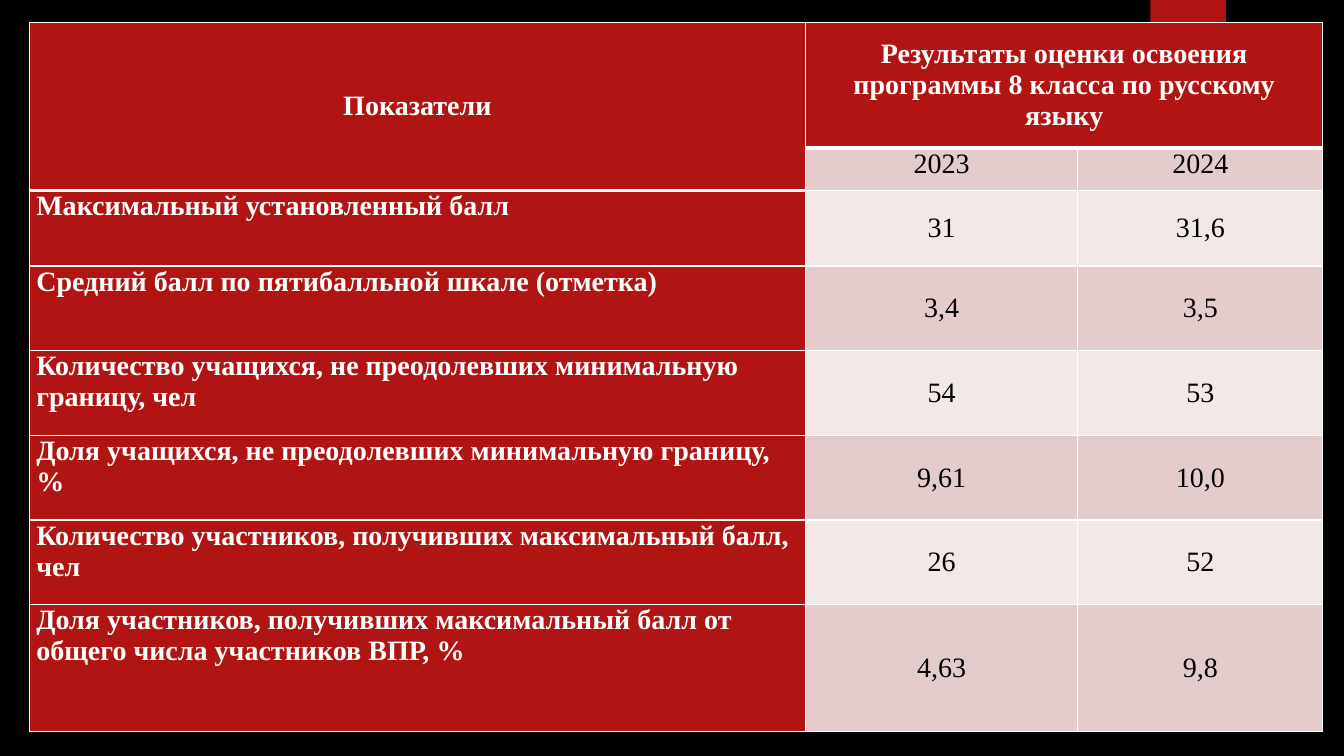
from lxml import etree
from pptx import Presentation
from pptx.dml.color import RGBColor
from pptx.enum.shapes import MSO_SHAPE
from pptx.enum.text import MSO_ANCHOR, PP_ALIGN
from pptx.oxml.ns import qn
from pptx.util import Inches, Pt

RECTANGLE = MSO_SHAPE.RECTANGLE
TOP, MIDDLE = MSO_ANCHOR.TOP, MSO_ANCHOR.MIDDLE
LEFT, CENTER = PP_ALIGN.LEFT, PP_ALIGN.CENTER

RED, BLACK, WHITE = "B01513", "000000", "FFFFFF"
DARK_BAND, LIGHT_BAND = "E4CCCC", "F2E8E7"
FONT = "Times New Roman"

ROWS = [
    ("Показатели", "Результаты оценки освоения программы 8 класса по русскому языку", ""),
    ("", "2023", "2024"),
    ("Максимальный установленный балл", "31", "31,6"),
    ("Средний балл по пятибалльной шкале (отметка)", "3,4", "3,5"),
    ("Количество учащихся, не преодолевших минимальную границу, чел", "54", "53"),
    ("Доля учащихся, не преодолевших минимальную границу, %", "9,61", "10,0"),
    ("Количество участников, получивших максимальный балл, чел", "26", "52"),
    ("Доля участников, получивших максимальный балл от общего числа участников ВПР, %",
     "4,63", "9,8"),
]
COLUMN_WIDTHS = [7.7, 2.7, 2.43]
ROW_HEIGHTS = [1.25, 0.42, 0.75, 0.84, 0.84, 0.84, 0.84, 1.26]
HEADER_BOTTOMS = {(0, 0), (1, 0), (0, 1), (0, 2)}


def color(value):
    return RGBColor.from_string(value)


def add_border(cell, side, points):
    line = etree.SubElement(cell._tc.get_or_add_tcPr(), qn(f"a:ln{side}"), w=str(Pt(points)))
    fill = etree.SubElement(line, qn("a:solidFill"))
    etree.SubElement(fill, qn("a:srgbClr"), val=WHITE)


def style_cell(cell, row, column):
    is_header = row == 0
    is_red = is_header or column == 0
    above = 3 if (row - 1, column) in HEADER_BOTTOMS and (row, column) != (1, 0) else 1
    below = 3 if (row, column) in HEADER_BOTTOMS else 1
    for side, points in (("L", 1), ("R", 1), ("T", above), ("B", below)):
        add_border(cell, side, points)

    band = DARK_BAND if row % 2 else LIGHT_BAND
    cell.fill.solid()
    cell.fill.fore_color.rgb = color(RED if is_red else band)
    cell.margin_left = cell.margin_right = Inches(0.07)
    cell.margin_top = cell.margin_bottom = 0
    cell.vertical_anchor = MIDDLE if is_header or (column > 0 and row > 1) else TOP

    para = cell.text_frame.paragraphs[0]
    para.alignment = CENTER if is_header or column > 0 else LEFT
    para.font.name = FONT
    para.font.size = Pt(20)
    para.font.bold = is_red
    para.font.color.rgb = color(WHITE if is_red else BLACK)
    for span in para.runs:
        span.font.name = FONT
        span.font.size = Pt(20)
        span.font.bold = is_red
        span.font.color.rgb = color(WHITE if is_red else BLACK)


def add_results_table(page):
    frame = page.shapes.add_table(
        len(ROWS), len(COLUMN_WIDTHS), Inches(0.29), Inches(0.22),
        Inches(sum(COLUMN_WIDTHS)), Inches(sum(ROW_HEIGHTS)))
    table = frame.table
    for column, width in zip(table.columns, COLUMN_WIDTHS):
        column.width = Inches(width)
    for row, height in zip(table.rows, ROW_HEIGHTS):
        row.height = Inches(height)
    for row, texts in enumerate(ROWS):
        for column, text in enumerate(texts):
            cell = table.cell(row, column)
            cell.text_frame.text = text
            style_cell(cell, row, column)
    table.cell(0, 0).merge(table.cell(1, 0))
    table.cell(0, 1).merge(table.cell(0, 2))


def main():
    deck = Presentation()
    deck.slide_width, deck.slide_height = Inches(13.33), Inches(7.5)
    page = deck.slides.add_slide(deck.slide_layouts[6])
    page.background.fill.solid()
    page.background.fill.fore_color.rgb = color(BLACK)

    tab = page.shapes.add_shape(RECTANGLE, Inches(11.41), 0, Inches(0.75), Inches(1.25))
    tab.shadow.inherit = False
    tab.fill.solid()
    tab.fill.fore_color.rgb = color(RED)
    tab.line.fill.background()

    add_results_table(page)
    deck.save("out.pptx")


if __name__ == "__main__":
    main()
